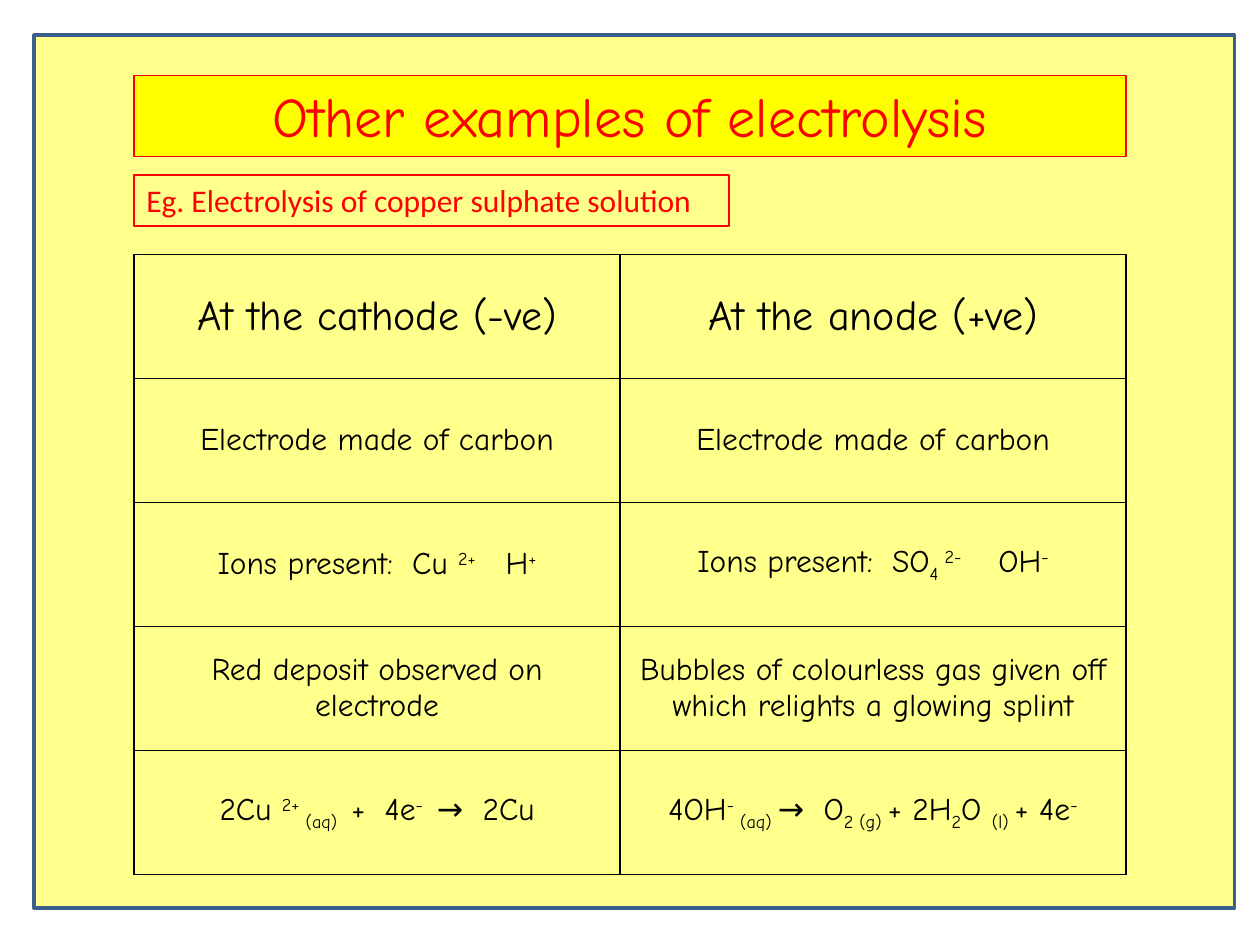
import pptx
import pptx.util
import pptx.dml.color
import pptx.enum.shapes
import pptx.enum.text
import pptx.oxml
import pptx.oxml.ns

Cm, Pt = pptx.util.Cm, pptx.util.Pt
RGBColor = pptx.dml.color.RGBColor
ALIGN = pptx.enum.text.PP_ALIGN
MIDDLE = pptx.enum.text.MSO_ANCHOR.MIDDLE

RED = RGBColor(0xFF, 0x00, 0x00)
YELLOW = RGBColor(0xFF, 0xFF, 0x00)
PALE = RGBColor(0xFF, 0xFF, 0x8B)
BLUE = RGBColor(0x3A, 0x5F, 0x8C)
BLACK = RGBColor(0x00, 0x00, 0x00)

TITLE = {"name": "Comic Neue", "size": Pt(32)}
SUBTITLE = {"name": "Calibri", "size": Pt(18)}
HEADER = {"name": "Comic Neue", "size": Pt(24)}
BODY = {"name": "Comic Neue", "size": Pt(18)}

# A leading ^ or _ marks super- or subscript; a number is a space widened by that many points
BASELINE = {"^": "30000", "_": "-25000"}
ROWS = [
    (["At the cathode (-ve)"], ["At the anode (+ve)"]),
    (["Electrode made of carbon"], ["Electrode made of carbon"]),
    (["Ions present:", 5, "Cu ", "^2+", 11, "H", "^+"],
     ["Ions present:", 5, "SO", "_4 ", "^2-", 15, "OH", "^-"]),
    (["Red deposit observed on electrode"],
     ["Bubbles of colourless gas given off which relights a glowing splint"]),
    (["2Cu ", "^2+ ", "_(aq)", 2, "+", 5, "4e", "^-", 2, "→", 5, "2Cu"],
     ["4OH", "^- ", "_(aq) ", "→", 5, "O", "_2 (g) ", "+ 2H", "_2", "O ",
      "_(l) ", "+ 4e", "^-"]),
]


class Deck:
    def __init__(self, prs):
        self.s = prs.slides.add_slide(prs.slide_layouts[6])

    def run(self, p, piece, style, color):
        r = p.add_run()
        for key, value in style.items():
            setattr(r.font, key, value)
        r.font.color.rgb = color
        rPr = r.font._element
        if isinstance(piece, int):
            r.text = " "
            rPr.set("spc", str(piece * 100))
        elif piece[0] in BASELINE:
            r.text = piece[1:]
            rPr.set("baseline", BASELINE[piece[0]])
        else:
            r.text = piece

    def box(self, x, y, w, h, fill, line, width, text="", style=None, align=ALIGN.LEFT):
        kind = pptx.enum.shapes.MSO_SHAPE.RECTANGLE
        sp = self.s.shapes.add_shape(kind, Cm(x), Cm(y), Cm(w), Cm(h))
        sp.shadow.inherit = False
        if fill is None:
            sp.fill.background()
        else:
            sp.fill.solid()
            sp.fill.fore_color.rgb = fill
        sp.line.color.rgb = line
        sp.line.width = Pt(width)
        if text:
            tf = sp.text_frame
            tf.word_wrap = True
            tf.vertical_anchor = pptx.enum.text.MSO_ANCHOR.TOP
            tf.paragraphs[0].alignment = align
            self.run(tf.paragraphs[0], text, style, RED)

    def borders(self, cell, width):
        tcPr = cell._tc.get_or_add_tcPr()
        for side in ("lnL", "lnR", "lnT", "lnB"):
            tcPr.append(pptx.oxml.parse_xml(
                f'<a:{side} {pptx.oxml.ns.nsdecls("a")} w="{Pt(width)}"><a:solidFill>'
                f'<a:srgbClr val="{BLACK}"/></a:solidFill></a:{side}>'))

    def table(self, x, y, widths, row_height, rows):
        frame = self.s.shapes.add_table(len(rows), len(widths), Cm(x), Cm(y),
                                        Cm(sum(widths)), Cm(row_height * len(rows)))
        table = frame.table
        table.first_row = table.horz_banding = False
        for column, width in zip(table.columns, widths):
            column.width = Cm(width)
        for i, row in enumerate(rows):
            table.rows[i].height = Cm(row_height)
            for j, pieces in enumerate(row):
                cell = table.cell(i, j)
                self.borders(cell, 1)
                cell.fill.background()
                cell.vertical_anchor = MIDDLE
                p = cell.text_frame.paragraphs[0]
                p.alignment = ALIGN.CENTER
                for piece in pieces:
                    self.run(p, piece, BODY if i else HEADER, BLACK)


def main():
    prs = pptx.Presentation()
    prs.slide_width, prs.slide_height = Cm(25.4), Cm(19.05)
    deck = Deck(prs)
    # Background panel
    deck.box(0.69, 0.71, 24.2, 17.6, PALE, BLUE, 2)
    # Title and subtitle
    deck.box(2.7, 1.52, 20, 1.63, YELLOW, RED, 0.75,
             "Other examples of electrolysis", TITLE, ALIGN.CENTER)
    deck.box(2.7, 3.53, 12, 1.03, None, RED, 0.75,
             "Eg. Electrolysis of copper sulphate solution", SUBTITLE)
    # Comparison of the two electrodes
    deck.table(2.7, 5.13, (9.8, 10.2), 2.5, ROWS)
    prs.save("out.pptx")


if __name__ == "__main__":
    main()
